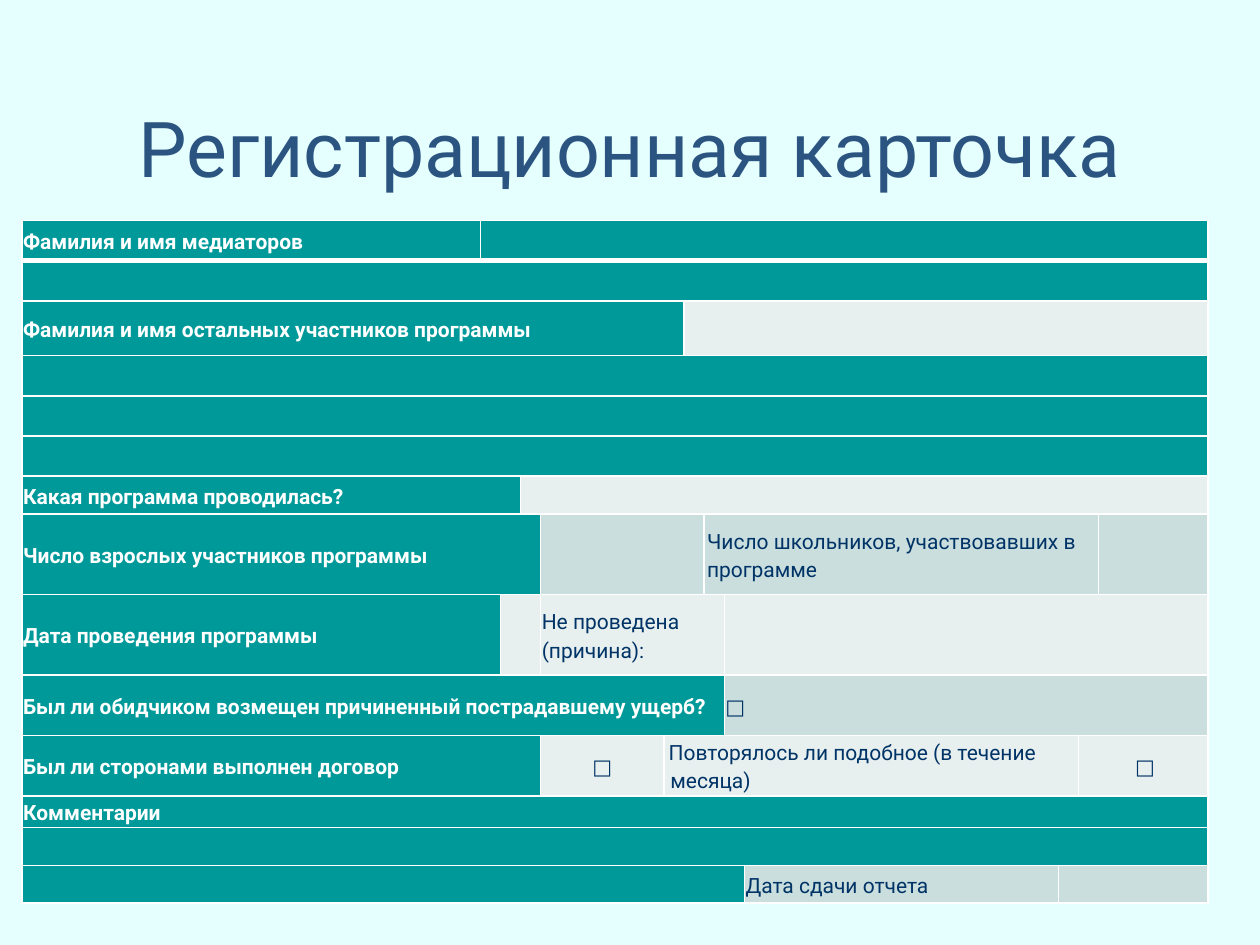
from lxml import etree
from pptx import Presentation
from pptx.dml.color import RGBColor
from pptx.enum.text import MSO_ANCHOR, PP_ALIGN
from pptx.oxml.ns import qn
from pptx.util import Pt

LEFT, CENTER = PP_ALIGN.LEFT, PP_ALIGN.CENTER
MIDDLE = MSO_ANCHOR.MIDDLE
FONT = "Roboto"
COLORS = {"page": "E5FFFF", "title": "2B5481", "teal": "009999", "pale": "E7EFEF",
          "grey": "CBDEDE", "navy": "003366", "white": "FFFFFF"}


def rgb(name):
    return RGBColor.from_string(COLORS[name])


def add_border(cell, side, width):
    """Draw a white line on one side of a cell; side is L, R, T or B."""
    ln = etree.Element(qn("a:ln" + side), w=str(Pt(width)))
    fill = etree.SubElement(ln, qn("a:solidFill"))
    etree.SubElement(fill, qn("a:srgbClr"), val=COLORS["white"])
    cell._tc.get_or_add_tcPr().append(ln)


prs = Presentation()
prs.slide_width, prs.slide_height = Pt(720), Pt(540)
slide = prs.slides.add_slide(prs.slide_layouts[5])
slide.background.fill.solid()
slide.background.fill.fore_color.rgb = rgb("page")

title = slide.shapes.title
title.left, title.top, title.width, title.height = Pt(36), Pt(30), Pt(648), Pt(108)
tf = title.text_frame
tf.text = "Регистрационная карточка"
tf.vertical_anchor = MIDDLE
p = tf.paragraphs[0]
p.alignment = CENTER
font = p.runs[0].font
font.name, font.size, font.color.rgb = FONT, Pt(44), rgb("title")

# Each row: height, then cells as (columns spanned, fill, text, format)
EMPTY_ROW = [(13, "teal")]
BOX = "□"
SMALL_GAP = {"space_after": Pt(3)}
CENTERED = {"alignment": CENTER}
rows = [
    (23, [(1, "teal", "Фамилия и имя медиаторов"), (12, "teal")]),
    (23, EMPTY_ROW),
    (31.2, [(6, "teal", "Фамилия и имя остальных участников программы"), (7, "pale")]),
    (23, EMPTY_ROW),
    (23, EMPTY_ROW),
    (23, EMPTY_ROW),
    (21.7, [(3, "teal", "Какая программа проводилась?", SMALL_GAP), (10, "pale")]),
    (46, [(4, "teal", "Число взрослых участников программы", SMALL_GAP), (3, "grey"),
          (5, "grey", "Число школьников, участвовавших в программе", SMALL_GAP, 1),
          (1, "grey")]),
    (46, [(2, "teal", "Дата проведения программы"), (2, "pale"),
          (4, "pale", "Не проведена (причина):"), (5, "pale")]),
    (34.5, [(8, "teal", "Был ли обидчиком возмещен причиненный пострадавшему ущерб?"),
            (5, "grey", BOX)]),
    (34.5, [(4, "teal", "Был ли сторонами выполнен договор"),
            (1, "pale", BOX, CENTERED),
            (6, "pale", "Повторялось ли подобное (в течение месяца)", {}, 3, -1),
            (2, "pale", BOX, CENTERED, 3, -1)]),
    (18, [(13, "teal", "Комментарии")]),
    (21.7, EMPTY_ROW),
    (21.7, [(9, "teal"), (1, "grey", "Дата сдачи отчета"), (3, "grey")]),
]
NARROW = 11.5
widths = [262] + [NARROW] * 3 + [70.5] + [NARROW] * 4 + [179.5] + [NARROW] * 2 + [62.5]

frame = slide.shapes.add_table(len(rows), len(widths), Pt(12.5), Pt(126),
                               Pt(sum(widths)), Pt(sum(h for h, _ in rows)))
table = frame.table
table.first_row = table.horz_banding = False
for column, width in zip(table.columns, widths):
    column.width = Pt(width)

for i, (height, cells) in enumerate(rows):
    table.rows[i].height = Pt(height)
    start = 0
    for span, fill, *content in cells:
        text, form, indent, hanging = content + ["", {}, 0, 0][len(content):]
        end = start + span - 1
        for j in range(start, end + 1):
            cell = table.cell(i, j)
            for side in "LRTB":
                thick = (i, side) in ((0, "B"), (1, "T"))
                add_border(cell, side, 3 if thick else 1)
            cell.fill.solid()
            cell.fill.fore_color.rgb = rgb(fill)
            cell.vertical_anchor = MIDDLE
            for side in ("left", "right", "top", "bottom"):
                setattr(cell, "margin_" + side, Pt(0.7))
            cell.text_frame.paragraphs[0]._p.get_or_add_endParaRPr().set("sz", "1200")
        cell = table.cell(i, start)
        if span > 1:
            cell.merge(table.cell(i, end))
        if text:
            p = cell.text_frame.paragraphs[0]
            paragraph_format = {"alignment": LEFT, "line_spacing": 1.15,
                                "space_after": Pt(10), **form}
            for name, value in paragraph_format.items():
                setattr(p, name, value)
            if indent:
                pPr = p._p.get_or_add_pPr()
                pPr.set("marL", str(Pt(indent)))
                pPr.set("indent", str(Pt(hanging)))
            r = p.add_run()
            r.text = text
            label = fill == "teal"
            for name, value in {"name": FONT, "size": Pt(12), "bold": label}.items():
                setattr(r.font, name, value)
            r.font.color.rgb = rgb("white" if label else "navy")
        start += span

prs.save("out.pptx")
